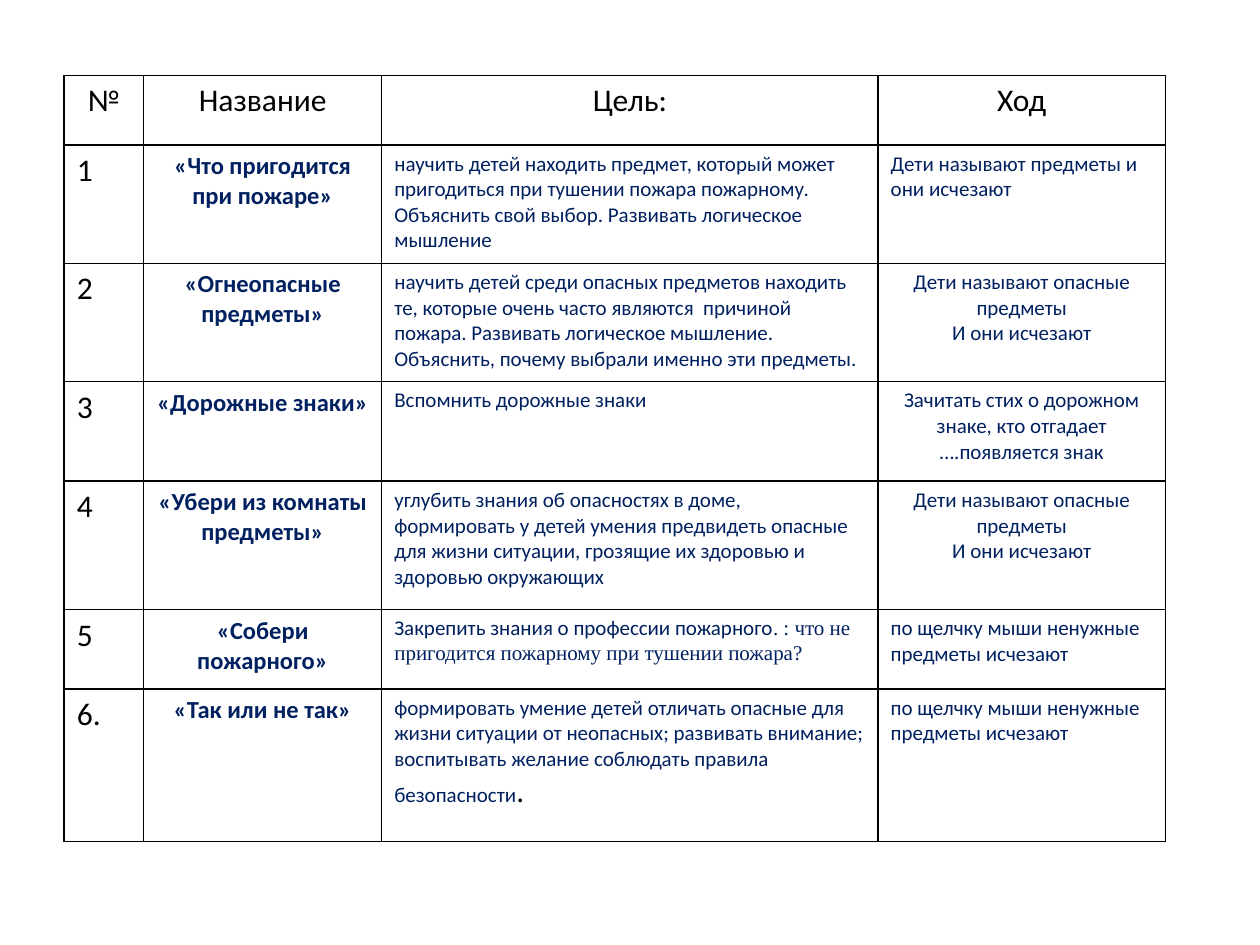
from dataclasses import dataclass

import pptx
import pptx.dml.color
import pptx.enum.text
import pptx.oxml
import pptx.oxml.ns
import pptx.util
from pptx.util import Inches

COLORS = {"black": "000000", "navy": "002060", "white": "FFFFFF"}
STYLES = {
    "large": {"size": 18, "bold": False, "name": "Calibri", "color": "black"},
    "game": {"size": 14, "bold": True, "name": "Calibri", "color": "navy"},
    "body": {"size": 12, "bold": False, "name": "Calibri", "color": "navy"},
    "serif": {"size": 12, "bold": False, "name": "Times New Roman", "color": "navy"},
}
LEFT = pptx.enum.text.PP_ALIGN.LEFT
CENTER = pptx.enum.text.PP_ALIGN.CENTER

COLUMN_WIDTHS = [0.63, 1.89, 3.94, 2.28]
ROW_HEIGHTS = [0.55, 0.94, 0.94, 0.79, 1.02, 0.63, 1.21]
HEADINGS = ["№", "Название", "Цель:", "Ход"]


@dataclass
class Span:
    text: str
    style: str = "body"


@dataclass
class Game:
    number: str
    title: str
    goal: list[Span]
    steps: list[str]
    steps_align: pptx.enum.text.PP_ALIGN = LEFT


NAME_DANGERS = ["Дети называют опасные предметы", "И они исчезают"]
CLICK_AWAY = ["по щелчку мыши ненужные предметы исчезают"]

GAMES = [
    Game("1", "«Что пригодится при пожаре»",
         [Span("научить детей находить предмет, который может пригодиться при тушении "
               "пожара пожарному. Объяснить свой выбор. Развивать логическое мышление")],
         ["Дети называют предметы и они исчезают"]),
    Game("2", "«Огнеопасные предметы»",
         [Span("научить детей среди опасных предметов находить те, которые очень часто "
               "являются  причиной пожара. Развивать логическое мышление. "
               "Объяснить, почему выбрали именно эти предметы.")],
         NAME_DANGERS, CENTER),
    Game("3", "«Дорожные знаки»",
         [Span("Вспомнить дорожные знаки")],
         ["Зачитать стих о дорожном знаке, кто отгадает ….появляется знак"], CENTER),
    Game("4", "«Убери из комнаты предметы»",
         [Span("углубить знания об опасностях в доме, формировать у детей умения "
               "предвидеть опасные для жизни ситуации, грозящие их здоровью и "
               "здоровью окружающих")],
         NAME_DANGERS, CENTER),
    Game("5", "«Собери пожарного»",
         [Span("Закрепить знания о профессии пожарного"),
          Span(". : что не пригодится пожарному при тушении пожара?", "serif")],
         CLICK_AWAY),
    Game("6.", "«Так или не так»",
         [Span("формировать умение детей отличать опасные для жизни ситуации от "
               "неопасных; развивать внимание; воспитывать желание соблюдать правила "
               "безопасности"),
          Span(".", "large")],
         CLICK_AWAY),
]


def rgb(color: str) -> pptx.dml.color.RGBColor:
    return pptx.dml.color.RGBColor.from_string(COLORS[color])


def set_borders(cell) -> None:
    properties = cell._tc.get_or_add_tcPr()
    for position, side in enumerate(("lnL", "lnR", "lnT", "lnB")):
        properties.insert(position, pptx.oxml.parse_xml(
            f'<a:{side} {pptx.oxml.ns.nsdecls("a")} w="{pptx.util.Pt(1)}">'
            f'<a:solidFill><a:srgbClr val="{COLORS["black"]}"/></a:solidFill></a:{side}>'))


def fill_cell(cell, paragraphs: list[list[Span]], align=LEFT) -> None:
    cell.fill.solid()
    cell.fill.fore_color.rgb = rgb("white")
    set_borders(cell)
    frame = cell.text_frame
    for index, spans in enumerate(paragraphs):
        paragraph = frame.add_paragraph() if index else frame.paragraphs[0]
        paragraph.alignment = align
        for span in spans:
            run = paragraph.add_run()
            run.text = span.text
            style = STYLES[span.style]
            formats = {"size": pptx.util.Pt(style["size"]),
                       "bold": style["bold"], "name": style["name"]}
            for attribute, value in formats.items():
                setattr(run.font, attribute, value)
            run.font.color.rgb = rgb(style["color"])


def main() -> None:
    deck = pptx.Presentation()
    deck.slide_width, deck.slide_height = Inches(10), Inches(7.5)
    slide = deck.slides.add_slide(deck.slide_layouts[6])

    # Table grid
    plan = slide.shapes.add_table(
        len(ROW_HEIGHTS), len(COLUMN_WIDTHS), Inches(0.51), Inches(0.6),
        Inches(sum(COLUMN_WIDTHS)), Inches(sum(ROW_HEIGHTS))).table
    plan.first_row = plan.horz_banding = False
    for column, width in zip(plan.columns, COLUMN_WIDTHS):
        column.width = Inches(width)
    for row, height in zip(plan.rows, ROW_HEIGHTS):
        row.height = Inches(height)

    # Heading row
    for column, heading in enumerate(HEADINGS):
        fill_cell(plan.cell(0, column), [[Span(heading, "large")]], CENTER)

    # One row per game
    for row, game in enumerate(GAMES, start=1):
        fill_cell(plan.cell(row, 0), [[Span(game.number, "large")]])
        fill_cell(plan.cell(row, 1), [[Span(game.title, "game")]], CENTER)
        fill_cell(plan.cell(row, 2), [game.goal])
        fill_cell(plan.cell(row, 3), [[Span(step)] for step in game.steps], game.steps_align)

    deck.save("out.pptx")


if __name__ == "__main__":
    main()
